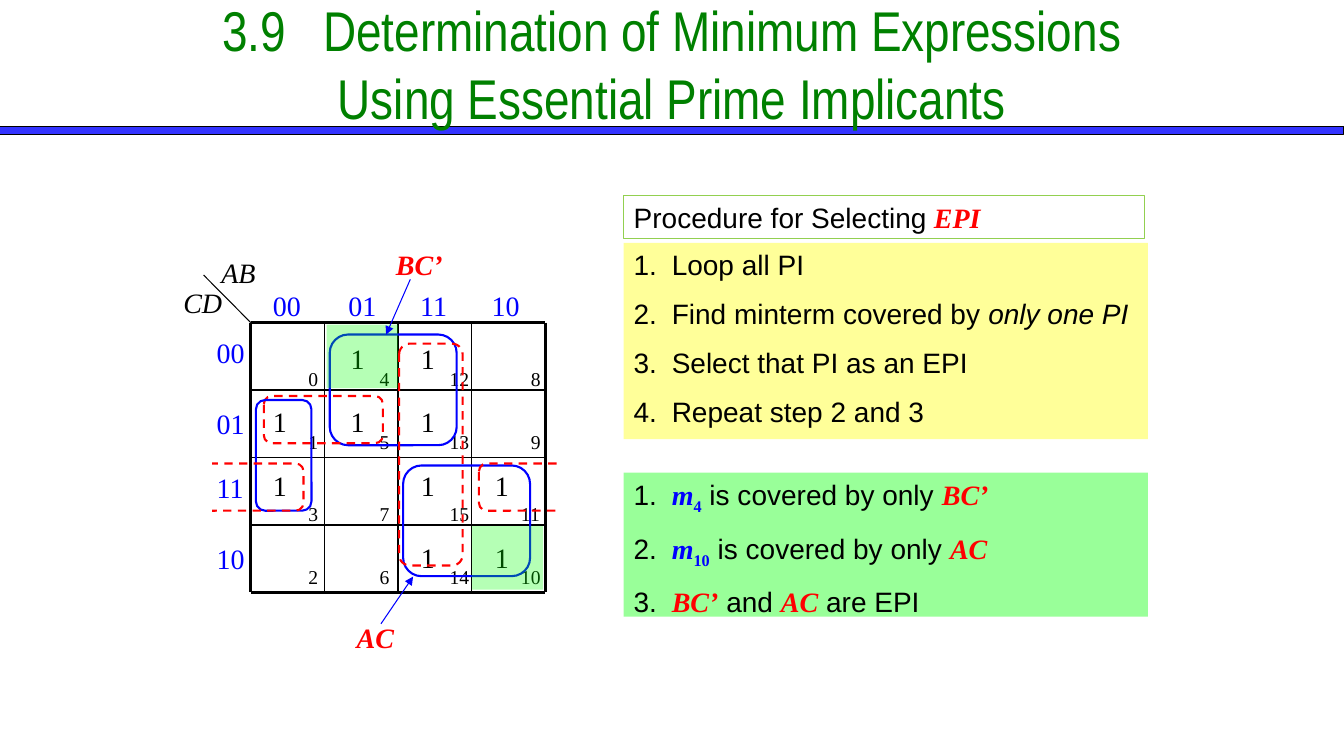
import pptx
import pptx.dml.color
import pptx.enum.dml
import pptx.enum.shapes
import pptx.enum.text
import pptx.oxml
import pptx.oxml.ns
import pptx.util
from lxml import etree

Cm = pptx.util.Cm
Pt = pptx.util.Pt
RGBColor = pptx.dml.color.RGBColor
Shape = pptx.enum.shapes.MSO_SHAPE

BLACK = RGBColor(0x00, 0x00, 0x00)
WHITE = RGBColor(0xFF, 0xFF, 0xFF)
BLUE = RGBColor(0x00, 0x00, 0xFF)
RED = RGBColor(0xFF, 0x00, 0x00)
BAR_BLUE = RGBColor(0x33, 0x33, 0xFF)
TITLE_GREEN = RGBColor(0x00, 0x80, 0x00)
FRAME_GREEN = RGBColor(0x92, 0xD0, 0x50)
CELL_GREEN = RGBColor(0x00, 0xFF, 0x00)
PANEL_YELLOW = RGBColor(0xFF, 0xFF, 0x99)
PANEL_GREEN = RGBColor(0x99, 0xFF, 0x99)

SANS = "Arial"
SERIF = "Times New Roman"

GRAY_CODE = (0, 1, 3, 2)
MINTERMS = {1, 3, 4, 5, 10, 11, 12, 13, 14, 15}
MAP_LEFT, MAP_TOP, MAP_WIDTH, MAP_HEIGHT = 6.32, 8.13, 7.42, 6.8


class SlideBuilder:
    def __init__(self, deck):
        self.page = deck.slides.add_slide(deck.slide_layouts[5])
        self.shapes = self.page.shapes

    def style(self, font, size, color, name=SERIF, bold=None, italic=None):
        font.name, font.size, font.bold, font.italic = name, Pt(size), bold, italic
        font.color.rgb = color

    def title(self, text, left, top, width, height):
        box = self.shapes.title
        box.left, box.top, box.width, box.height = map(Cm, (left, top, width, height))
        frame = box.text_frame
        frame.auto_size = pptx.enum.text.MSO_AUTO_SIZE.NONE
        frame.vertical_anchor = pptx.enum.text.MSO_ANCHOR.MIDDLE
        para = frame.paragraphs[0]
        para.text = text
        para.alignment = pptx.enum.text.PP_ALIGN.CENTER
        self.style(para.font, 40, TITLE_GREEN, "Arial Narrow")
        return box

    def shape(self, place, fill=None, line=None, weight=0.75, kind=Shape.RECTANGLE):
        box = self.shapes.add_shape(kind, *map(Cm, place))
        box.shadow.inherit = False
        if fill is None:
            box.fill.background()
        else:
            box.fill.solid()
            box.fill.fore_color.rgb = fill
        if line is None:
            box.line.fill.background()
        else:
            box.line.color.rgb = line
            box.line.width = Pt(weight)
        return box

    def loop(self, color, *place):
        box = self.shape(place, line=color, weight=1.5, kind=Shape.ROUNDED_RECTANGLE)
        if color == RED:
            box.line.dash_style = pptx.enum.dml.MSO_LINE.DASH

    def highlight(self, *place):
        box = self.shape(place, CELL_GREEN)
        color = box.element.spPr.find(".//" + pptx.oxml.ns.qn("a:srgbClr"))
        etree.SubElement(color, pptx.oxml.ns.qn("a:alpha"), val="29000")

    def line(self, start, end, color=BLACK, weight=0.75, arrow=False):
        straight = pptx.enum.shapes.MSO_CONNECTOR.STRAIGHT
        connector = self.shapes.add_connector(straight, *map(Cm, start + end))
        connector.line.color.rgb = color
        connector.line.width = Pt(weight)
        if arrow:
            outline = connector.line._get_or_add_ln()
            etree.SubElement(outline, pptx.oxml.ns.qn("a:tailEnd"), type="triangle")
        etree.SubElement(connector.element.spPr, pptx.oxml.ns.qn("a:effectLst"))

    def label(self, text, left, top, width, color=BLACK, size=20, bold=None, italic=None):
        box = self.shapes.add_textbox(Cm(left), Cm(top), Cm(width), Cm(size * 0.042 + 0.25))
        box.text_frame.word_wrap = False
        para = box.text_frame.paragraphs[0]
        para.text = text
        self.style(para.font, size, color, SERIF, bold, italic)

    def digits(self, text, left, top, color=BLACK):
        self.label(text, left, top, 0.51 + 0.35 * len(text), color)

    def panel(self, place, lines, fill=None, line=None, hanging=True, numbered=False):
        frame = self.shape(place, fill, line).text_frame
        frame.word_wrap = True
        frame.vertical_anchor = pptx.enum.text.MSO_ANCHOR.TOP
        for index, spans in enumerate(lines):
            para = frame.paragraphs[0] if index == 0 else frame.add_paragraph()
            para.alignment = pptx.enum.text.PP_ALIGN.LEFT
            para.space_before = Pt(11 if index else 0)
            properties = para._p.get_or_add_pPr()
            if hanging:
                properties.set("marL", str(Cm(0.96)))
                properties.set("indent", str(-Cm(0.96)))
            if numbered:
                etree.SubElement(properties, pptx.oxml.ns.qn("a:buFont"), typeface="+mj-lt")
                etree.SubElement(properties, pptx.oxml.ns.qn("a:buAutoNum"), type="arabicPeriod")
            self.style(para.font, 20, BLACK, SANS)
            for text, role in spans:
                self.span(para, text, role)

    def span(self, para, text, role):
        span = para.add_run()
        span.text = text
        if role == "italic":
            span.font.italic = True
        elif role == "implicant":
            self.style(span.font, 20, RED, bold=True, italic=True)
        elif role == "minterm":
            self.style(span.font, 20, BLUE, bold=True, italic=True)
        elif role == "index":
            self.style(span.font, 20, BLUE, bold=True)
            span._r.get_or_add_rPr().set("baseline", "-25000")


def draw_panels(slide):
    slide.panel((15.72, 4.93, 13.13, 1.09),
                [[("Procedure for Selecting", ""), (" EPI", "implicant")]],
                line=FRAME_GREEN, hanging=False)
    slide.panel((15.72, 6.12, 13.21, 4.95), [
        [("Loop all PI", "")],
        [("Find minterm covered by ", ""), ("only one PI", "italic")],
        [("Select that PI as an EPI", "")],
        [("Repeat step 2 and 3", "")],
    ], PANEL_YELLOW, numbered=True)
    covered = [
        [(f"{number}.\t", ""), ("m", "minterm"), (minterm, "index"),
         (" is covered by only ", ""), (implicant, "implicant")]
        for number, minterm, implicant in ((1, "4", "BC’"), (2, "10", "AC"))
    ]
    conclusion = [("3.\t", ""), ("BC’", "implicant"), (" and ", ""),
                  ("AC", "implicant"), (" are EPI", "")]
    slide.panel((15.72, 11.91, 13.21, 3.63), covered + [conclusion], PANEL_GREEN)


def draw_map(slide):
    right, bottom = MAP_LEFT + MAP_WIDTH, MAP_TOP + MAP_HEIGHT
    for step in range(5):
        weight = 2.25 if step in (0, 4) else 1
        x = MAP_LEFT + step * MAP_WIDTH / 4
        y = MAP_TOP + step * MAP_HEIGHT / 4
        slide.line((MAP_LEFT, y), (right, y), weight=weight)
        slide.line((x, MAP_TOP), (x, bottom), weight=weight)
    slide.line((MAP_LEFT, MAP_TOP), (5.13, 6.93))
    slide.label("AB", 5.33, 6.32, 1.37, italic=True)
    slide.label("CD", 4.37, 7.06, 1.5, italic=True)

    for code, left in zip(GRAY_CODE, (6.63, 8.53, 10.34, 12.14)):
        slide.digits(f"{code:02b}", left, 7.14, BLUE)
    for code, top in zip(GRAY_CODE, (8.33, 10.13, 11.73, 13.51)):
        slide.digits(f"{code:02b}", 5.21, top, BLUE)

    columns = list(zip(GRAY_CODE, (6.63, 8.59, 10.36, 12.22), (8.28, 10.08, 12.09, 13.89)))
    rows = list(zip(GRAY_CODE, (8.48, 10.08, 11.68, 13.49), (9.12, 10.72, 12.52, 14.12)))
    for column, one_left, number_right in columns:
        for row, one_top, number_top in rows:
            minterm = 4 * column + row
            width = 0.51 + 0.25 * len(str(minterm))
            slide.label(str(minterm), number_right - width, number_top, width, size=14)
            if minterm in MINTERMS:
                slide.digits("1", one_left, one_top)


def draw_implicants(slide):
    slide.loop(BLUE, 8.31, 8.43, 3.2, 2.79)
    slide.loop(BLUE, 10.16, 11.73, 3.2, 2.79)
    slide.loop(RED, 6.65, 9.98, 3, 1.19)
    slide.loop(BLUE, 6.45, 10.08, 1.4, 2.79)
    slide.loop(RED, 10.06, 8.66, 1.6, 5.59)
    for left in (4.65, 12.07):
        slide.loop(RED, left, 11.68, 3, 1.19)
    for left in (14.07, 3.94):
        slide.shape((left, 11.3, 1.4, 2), WHITE)
    slide.highlight(8.23, 8.18, 1.8, 1.6)
    slide.highlight(11.89, 13.26, 1.8, 1.6)
    slide.label("BC’", 9.73, 6.12, 1.68, RED, bold=True, italic=True)
    slide.line((10.34, 7.04), (9.73, 8.43), BLUE, arrow=True)
    slide.label("AC", 8.74, 15.52, 1.45, RED, bold=True, italic=True)
    slide.line((9.6, 15.72), (10.41, 14.53), BLUE, arrow=True)


def main():
    deck = pptx.Presentation()
    deck.slide_width, deck.slide_height = Cm(33.87), Cm(19.05)
    slide = SlideBuilder(deck)
    title = slide.title(
        "3.9\tDetermination of Minimum Expressions\vUsing Essential Prime Implicants",
        4.23, 0, 25.4, 3.18)
    bar = slide.shape((0, 3.18, 33.87, 0.2), BAR_BLUE, BLACK)
    title.element.addprevious(bar.element)
    draw_panels(slide)
    draw_map(slide)
    draw_implicants(slide)
    deck.save("out.pptx")


if __name__ == "__main__":
    main()
